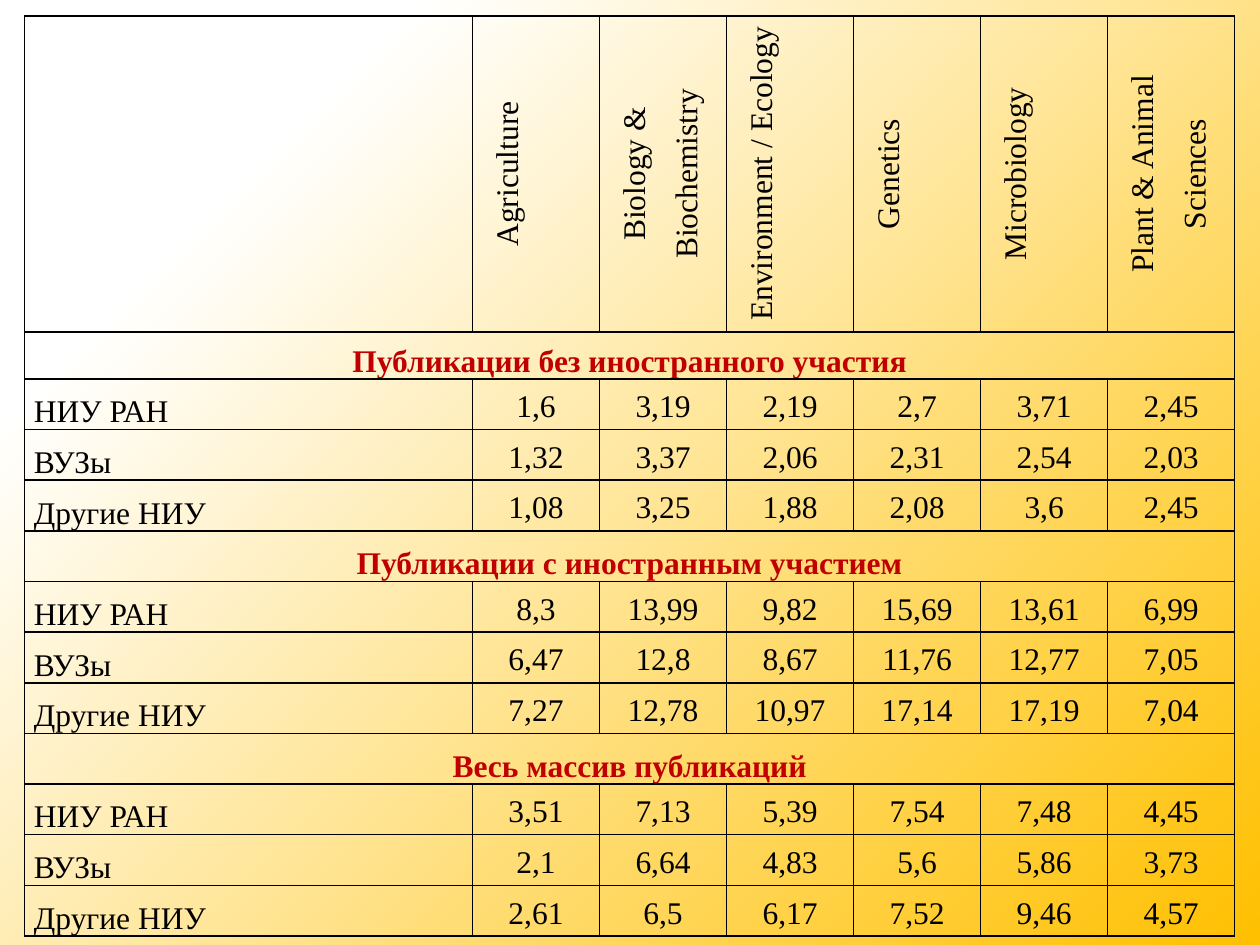
"""Build a slide with a table of publication indicators by field and type of institution."""
from pptx import Presentation
from pptx.dml.color import RGBColor
from pptx.enum.text import MSO_ANCHOR as Anchor, PP_ALIGN as Align
from pptx.oxml import parse_xml
from pptx.oxml.ns import nsdecls
from pptx.util import Pt

BLACK = RGBColor(0x00, 0x00, 0x00)
RED = RGBColor(0xC0, 0x00, 0x00)
WHITE = RGBColor(0xFF, 0xFF, 0xFF)
AMBER = RGBColor(0xFF, 0xC0, 0x00)

FIELDS = ["Agriculture", "Biology & Biochemistry", "Environment / Ecology",
          "Genetics", "Microbiology", "Plant & Animal Sciences"]
INSTITUTIONS = ["НИУ РАН", "ВУЗы", "Другие НИУ"]
SECTIONS = {
    "Публикации без иностранного участия": [
        "1,6 3,19 2,19 2,7 3,71 2,45",
        "1,32 3,37 2,06 2,31 2,54 2,03",
        "1,08 3,25 1,88 2,08 3,6 2,45"],
    "Публикации с иностранным участием": [
        "8,3 13,99 9,82 15,69 13,61 6,99",
        "6,47 12,8 8,67 11,76 12,77 7,05",
        "7,27 12,78 10,97 17,14 17,19 7,04"],
    "Весь массив публикаций": [
        "3,51 7,13 5,39 7,54 7,48 4,45",
        "2,1 6,64 4,83 5,6 5,86 3,73",
        "2,61 6,5 6,17 7,52 9,46 4,57"],
}
COLUMN_WIDTHS = [256] + [72.6] * len(FIELDS)
ROW_HEIGHTS = [148.3, 26.9] + [28.95] * 11


def write(cell, text, align=Align.CENTER, anchor=Anchor.MIDDLE, spacing=1.15, color=BLACK, bold=False):
    cell.text = text
    cell.vertical_anchor = anchor
    para = cell.text_frame.paragraphs[0]
    para.alignment = align
    para.line_spacing = spacing
    para.font.name = "Times New Roman"
    para.font.size = Pt(18)
    para.font.bold = bold
    para.font.color.rgb = color


def add_borders(cell):
    properties = cell._tc.get_or_add_tcPr()
    for position, side in enumerate("LRTB"):
        properties.insert(position, parse_xml(
            f'<a:ln{side} {nsdecls("a")} w="{Pt(1)}"><a:solidFill>'
            f'<a:srgbClr val="{BLACK}"/></a:solidFill></a:ln{side}>'))


deck = Presentation()
deck.slide_width, deck.slide_height = Pt(720), Pt(540)
page = deck.slides.add_slide(deck.slide_layouts[6])

stops = "".join(f'<a:gs pos="{percent * 1000}"><a:srgbClr val="{color}"/></a:gs>'
                for percent, color in [(0, WHITE), (19, WHITE), (100, AMBER)])
page._element.cSld.insert(0, parse_xml(
    f'<p:bg {nsdecls("p", "a")}><p:bgPr><a:gradFill><a:gsLst>{stops}</a:gsLst>'
    '<a:path path="circle"><a:fillToRect r="100000" b="100000"/></a:path>'
    '</a:gradFill><a:effectLst/></p:bgPr></p:bg>'))

table = page.shapes.add_table(
    len(ROW_HEIGHTS), len(COLUMN_WIDTHS), Pt(14), Pt(9.1),
    Pt(sum(COLUMN_WIDTHS)), Pt(sum(ROW_HEIGHTS))).table
table.first_row = table.horz_banding = False
for column, width in zip(table.columns, COLUMN_WIDTHS):
    column.width = Pt(width)
for row, height in zip(table.rows, ROW_HEIGHTS):
    row.height = Pt(height)

for cell in table.iter_cells():
    cell.fill.background()
    cell.margin_left = cell.margin_right = Pt(5.4)
    cell.margin_top = cell.margin_bottom = 0
    add_borders(cell)

for column, field in enumerate(FIELDS, 1):
    cell = table.cell(0, column)
    write(cell, field, spacing=1.5)
    cell._tc.get_or_add_tcPr().set("vert", "vert270")

row = 1
for title, lines in SECTIONS.items():
    table.cell(row, 0).merge(table.cell(row, len(FIELDS)))
    write(table.cell(row, 0), title, anchor=Anchor.BOTTOM, color=RED, bold=True)
    for row, (institution, line) in enumerate(zip(INSTITUTIONS, lines), row + 1):
        write(table.cell(row, 0), institution, align=Align.LEFT, anchor=Anchor.BOTTOM)
        for column, value in enumerate(line.split(), 1):
            write(table.cell(row, column), value)
    row += 1

deck.save("out.pptx")
